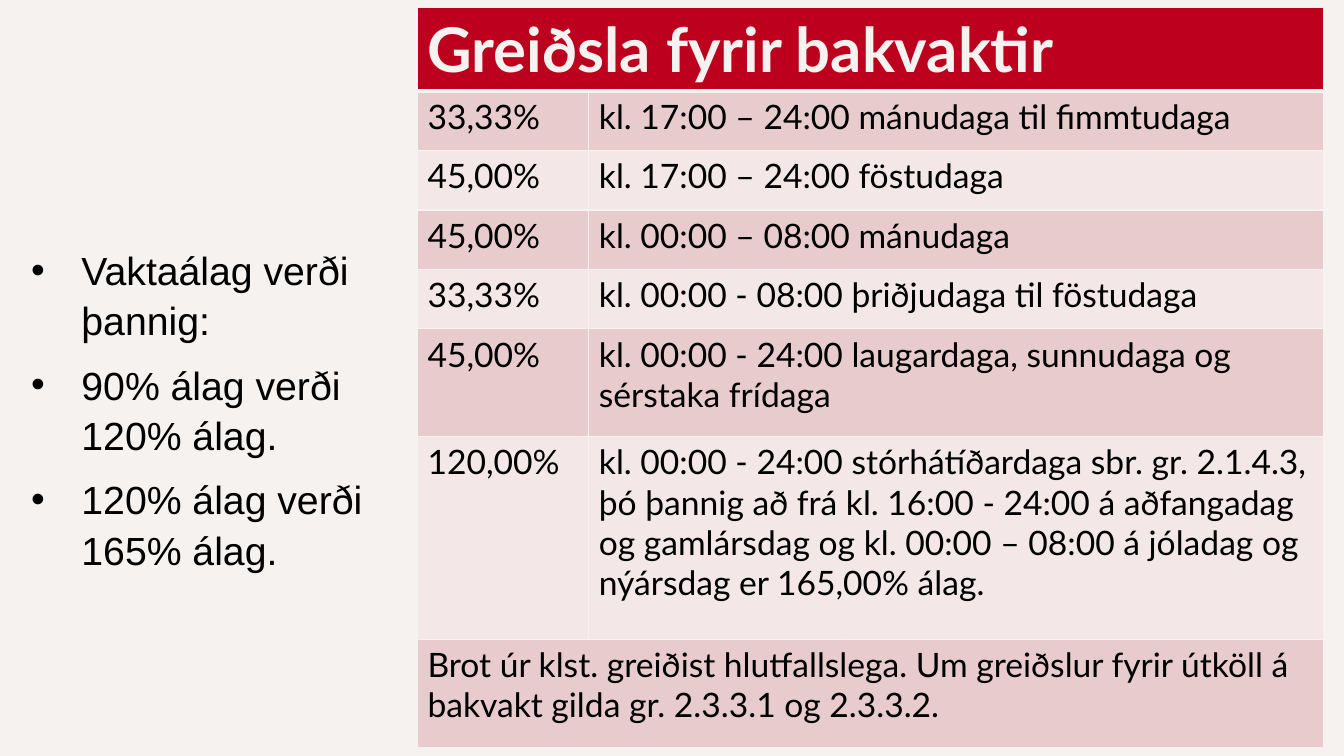
from dataclasses import dataclass

from lxml import etree
from pptx import Presentation
from pptx.dml.color import RGBColor
from pptx.enum import text
from pptx.oxml import ns
from pptx.util import Inches, Pt


@dataclass(frozen=True)
class Theme:
    paper: str = "F5F2F0"
    ink: str = "000000"
    header: str = "BD001D"
    bands: tuple = ("E8CCCD", "F4E7E8")
    list_font: str = "Arial"
    table_font: str = "Lato"
    title_size: int = 44
    list_size: int = 28
    cell_size: int = 24
    thin_line: int = 1
    thick_line: int = 3


THEME = Theme()

SURCHARGES = [
    "Vaktaálag verði þannig:",
    "90% álag verði 120% álag.",
    "120% álag verði 165% álag.",
]
TITLE = "Greiðsla fyrir bakvaktir"
RATES = [
    ("33,33%", "kl. 17:00 – 24:00 mánudaga til fimmtudaga"),
    ("45,00%", "kl. 17:00 – 24:00 föstudaga"),
    ("45,00%", "kl. 00:00 – 08:00 mánudaga"),
    ("33,33%", "kl. 00:00 - 08:00 þriðjudaga til föstudaga"),
    ("45,00%", "kl. 00:00 - 24:00 laugardaga, sunnudaga og sérstaka frídaga"),
    ("120,00%", "kl. 00:00 - 24:00 stórhátíðardaga sbr. gr. 2.1.4.3, þó þannig "
                "að frá kl. 16:00 - 24:00 á aðfangadag og gamlársdag og "
                "kl. 00:00 – 08:00 á jóladag og nýársdag er 165,00% álag."),
]
FOOTNOTE = ("Brot úr klst. greiðist hlutfallslega. Um greiðslur fyrir útköll á "
            "bakvakt gilda gr. 2.3.3.1 og 2.3.3.2.")
COLUMN_WIDTHS = [1.7, 7.29]
ROW_HEIGHTS = [0.83] + [0.59] * 4 + [1.07, 2.01, 1.07]


def style_text(para, font, size, color, bold=False):
    for span in para.runs:
        span.font.name = font
        span.font.size = Pt(size)
        span.font.bold = bold
        span.font.color.rgb = RGBColor.from_string(color)


def add_bullet(para, indent):
    """Give the paragraph a hanging bullet."""
    props = para._p.get_or_add_pPr()
    props.set("marL", str(indent))
    props.set("indent", str(-indent))
    etree.SubElement(props, ns.qn("a:buFont"), typeface=THEME.list_font)
    etree.SubElement(props, ns.qn("a:buChar"), char="•")


def add_bullet_list(page, items, left, top, width, height):
    box = page.shapes.add_textbox(Inches(left), Inches(top), Inches(width), Inches(height))
    frame = box.text_frame
    frame.word_wrap = True
    frame.auto_size = text.MSO_AUTO_SIZE.SHAPE_TO_FIT_TEXT
    frame.text = "\n".join(items)
    for para in frame.paragraphs:
        para.line_spacing = 1.07
        para.space_after = Pt(10)
        add_bullet(para, Inches(0.5))
        style_text(para, THEME.list_font, THEME.list_size, THEME.ink)


def set_borders(cell, top, bottom):
    """Draw all four sides; top and bottom are widths in points."""
    props = cell._tc.get_or_add_tcPr()
    widths = {"lnL": THEME.thin_line, "lnR": THEME.thin_line, "lnT": top, "lnB": bottom}
    for position, (side, width) in enumerate(widths.items()):
        line = etree.Element(ns.qn(f"a:{side}"), w=str(Pt(width)))
        fill = etree.SubElement(line, ns.qn("a:solidFill"))
        etree.SubElement(fill, ns.qn("a:srgbClr"), val=THEME.paper)
        props.insert(position, line)


def style_cell(cell, row):
    is_header = row == 0
    fill_color = THEME.header if is_header else THEME.bands[(row - 1) % 2]
    cell.fill.solid()
    cell.fill.fore_color.rgb = RGBColor.from_string(fill_color)
    set_borders(
        cell,
        top=THEME.thick_line if row == 1 else THEME.thin_line,
        bottom=THEME.thick_line if is_header else THEME.thin_line,
    )
    size = THEME.title_size if is_header else THEME.cell_size
    color = THEME.paper if is_header else THEME.ink
    for para in cell.text_frame.paragraphs:
        style_text(para, THEME.table_font, size, color, bold=is_header)


def add_rate_table(page, left, top):
    """Add the rates; a row with one entry spans both columns."""
    rows = [(TITLE,), *RATES, (FOOTNOTE,)]
    table = page.shapes.add_table(
        len(rows), len(COLUMN_WIDTHS), Inches(left), Inches(top),
        Inches(sum(COLUMN_WIDTHS)), Inches(sum(ROW_HEIGHTS)),
    ).table
    for column, width in zip(table.columns, COLUMN_WIDTHS):
        column.width = Inches(width)
    for index, (entries, height) in enumerate(zip(rows, ROW_HEIGHTS)):
        table.rows[index].height = Inches(height)
        if len(entries) == 1:
            table.cell(index, 0).merge(table.cell(index, 1))
        for column, entry in enumerate(entries):
            table.cell(index, column).text_frame.text = entry
        for cell in table.rows[index].cells:
            style_cell(cell, index)


def main():
    deck = Presentation()
    deck.slide_width, deck.slide_height = Inches(13.33), Inches(7.5)
    page = deck.slides.add_slide(deck.slide_layouts[6])
    page.background.fill.solid()
    page.background.fill.fore_color.rgb = RGBColor.from_string(THEME.paper)
    add_bullet_list(page, SURCHARGES, 0.21, 2.36, 3.64, 3.38)
    add_rate_table(page, 4.14, 0.07)
    deck.save("out.pptx")


if __name__ == "__main__":
    main()
